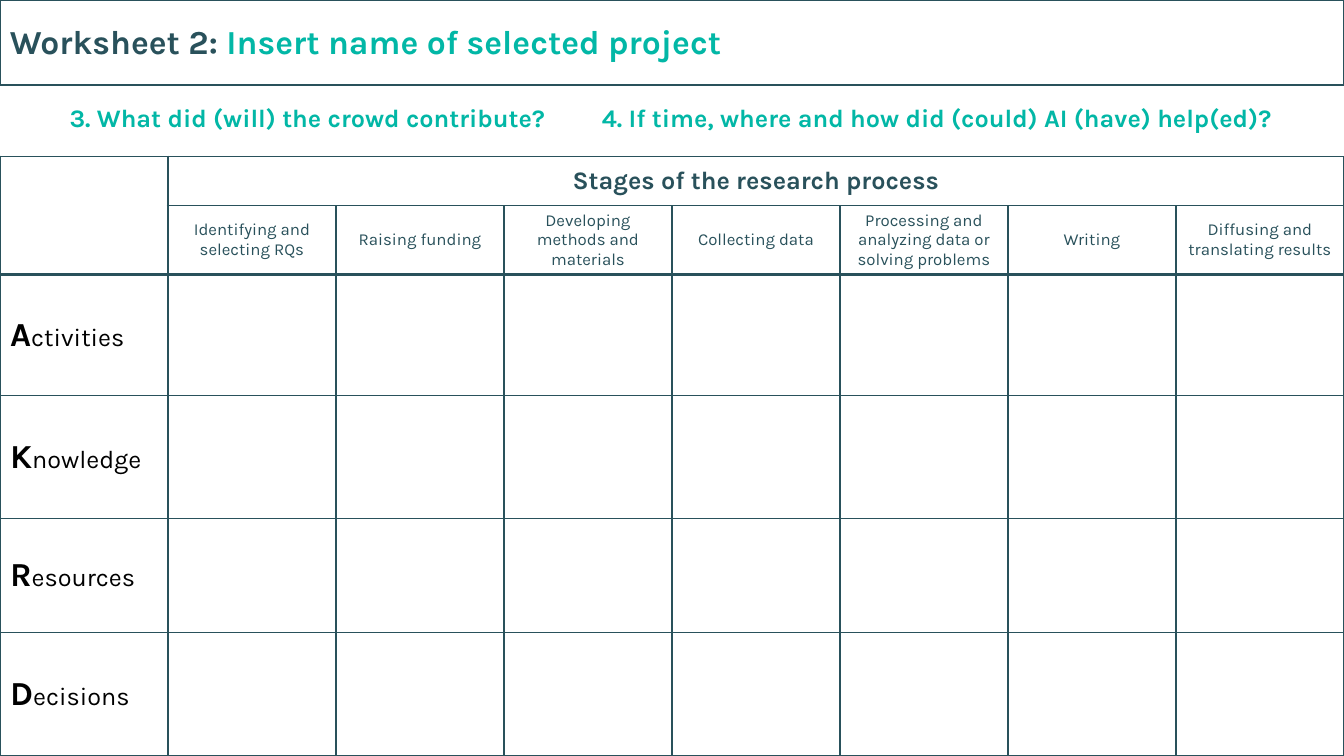
import pptx
import pptx.dml.color
import pptx.enum.shapes
import pptx.enum.text
import pptx.oxml
import pptx.oxml.ns
import pptx.util
from lxml import etree

# Content
TITLE = ("Worksheet 2: ", "Insert name of selected project")
QUESTIONS = (
    "3. What did (will) the crowd contribute?",
    "4. If time, where and how did (could) AI (have) help(ed)?",
)
STAGES_HEADING = "Stages of the research process"
STAGES = [
    "Identifying and selecting RQs",
    "Raising funding",
    "Developing methods and materials",
    "Collecting data",
    "Processing and analyzing data or solving problems",
    "Writing",
    "Diffusing and translating results",
]
ASPECTS = ["Activities", "Knowledge", "Resources", "Decisions"]

# Style and layout, in inches and points
COLORS = {"dark": "29515B", "teal": "02B7A6", "black": "000000", "white": "FFFFFF"}
FONT = "Karla"
WIDTH, HEIGHT = 13.33, 7.5
BANNER_HEIGHT = 0.84
TABLE_TOP = 1.55
ROW_HEIGHTS = [0.49, 0.68, 1.2, 1.22, 1.13, 1.22]
HEADER_ROWS = 2
QUESTION_STARTS = (0.69, 5.97)
THIN, THICK = 1, 2.25

Inches, Pt = pptx.util.Inches, pptx.util.Pt
PP_ALIGN = pptx.enum.text.PP_ALIGN
MIDDLE = pptx.enum.text.MSO_ANCHOR.MIDDLE


def color(name):
    return pptx.dml.color.RGBColor.from_string(COLORS[name])


def add_run(paragraph, text, size, color_name, bold=False):
    run = paragraph.add_run()
    run.text = text
    run.font.name = FONT
    run.font.size = Pt(size)
    run.font.bold = bold
    run.font.color.rgb = color(color_name)


def add_text_box(slide, left, top, width, height):
    frame = slide.shapes.add_textbox(*map(Inches, (left, top, width, height))).text_frame
    frame.word_wrap = True
    return frame


def set_borders(cell, widths):
    properties = cell._tc.get_or_add_tcPr()
    for index, (side, width) in enumerate(widths.items()):
        line = etree.Element(pptx.oxml.ns.qn("a:ln" + side), w=str(Pt(width)))
        fill = etree.SubElement(line, pptx.oxml.ns.qn("a:solidFill"))
        etree.SubElement(fill, pptx.oxml.ns.qn("a:srgbClr"), val=COLORS["dark"])
        properties.insert(index, line)


def add_banner(slide):
    frame = add_text_box(slide, 0, 0.16, 9.77, 0.5)
    for text, color_name in zip(TITLE, ("dark", "teal")):
        add_run(frame.paragraphs[0], text, 24, color_name, True)
    banner = slide.shapes.add_shape(
        pptx.enum.shapes.MSO_SHAPE.RECTANGLE, 0, 0, Inches(WIDTH), Inches(BANNER_HEIGHT))
    banner.shadow.inherit = False
    banner.fill.background()
    banner.line.color.rgb = color("dark")
    banner.line.width = Pt(1.5)


def add_questions(slide):
    frame = add_text_box(slide, 0, 0.97, WIDTH, 0.4)
    first, second = QUESTION_STARTS
    frame.margin_left = Inches(first)
    frame.margin_right = 0
    paragraph = frame.paragraphs[0]
    tabs = etree.SubElement(paragraph._p.get_or_add_pPr(), pptx.oxml.ns.qn("a:tabLst"))
    etree.SubElement(tabs, pptx.oxml.ns.qn("a:tab"),
                     pos=str(Inches(second - first)), algn="l")
    add_run(paragraph, "\t".join(QUESTIONS), 18, "teal", True)


def add_worksheet(slide):
    rows, columns = len(ROW_HEIGHTS), len(STAGES) + 1
    frame = slide.shapes.add_table(
        rows, columns, 0, Inches(TABLE_TOP), Inches(WIDTH), Inches(sum(ROW_HEIGHTS)))
    table = frame.table
    for column in table.columns:
        column.width = Inches(WIDTH / columns)
    for row, height in zip(table.rows, ROW_HEIGHTS):
        row.height = Inches(height)
    table.cell(0, 0).merge(table.cell(HEADER_ROWS - 1, 0))
    table.cell(0, 1).merge(table.cell(0, columns - 1))

    # Fills, and heavy rules below the header and right of the labels
    for row in range(rows):
        for column in range(columns):
            cell = table.cell(row, column)
            cell.fill.solid()
            cell.fill.fore_color.rgb = color("white")
            cell.vertical_anchor = MIDDLE
            if cell.is_spanned:
                continue
            next_row = row + (cell.span_height if cell.is_merge_origin else 1)
            set_borders(cell, {
                "L": THICK if column == 1 else THIN,
                "R": THICK if column == 0 else THIN,
                "T": THICK if row == HEADER_ROWS else THIN,
                "B": THICK if next_row == HEADER_ROWS else THIN,
            })

    # Stage headings
    headings = [(0, 1, STAGES_HEADING, 18, True)]
    headings += [(1, column, stage, 12, False) for column, stage in enumerate(STAGES, 1)]
    for row, column, text, size, bold in headings:
        paragraph = table.cell(row, column).text_frame.paragraphs[0]
        paragraph.alignment = PP_ALIGN.CENTER
        add_run(paragraph, text, size, "dark", bold)

    # Row labels with a large initial
    for row, aspect in enumerate(ASPECTS, HEADER_ROWS):
        paragraph = table.cell(row, 0).text_frame.paragraphs[0]
        add_run(paragraph, aspect[0], 24, "black", True)
        add_run(paragraph, aspect[1:], 18, "black")


def main():
    presentation = pptx.Presentation()
    presentation.slide_width = Inches(WIDTH)
    presentation.slide_height = Inches(HEIGHT)
    slide = presentation.slides.add_slide(presentation.slide_layouts[6])
    add_worksheet(slide)
    add_banner(slide)
    add_questions(slide)
    presentation.save("out.pptx")


if __name__ == "__main__":
    main()
